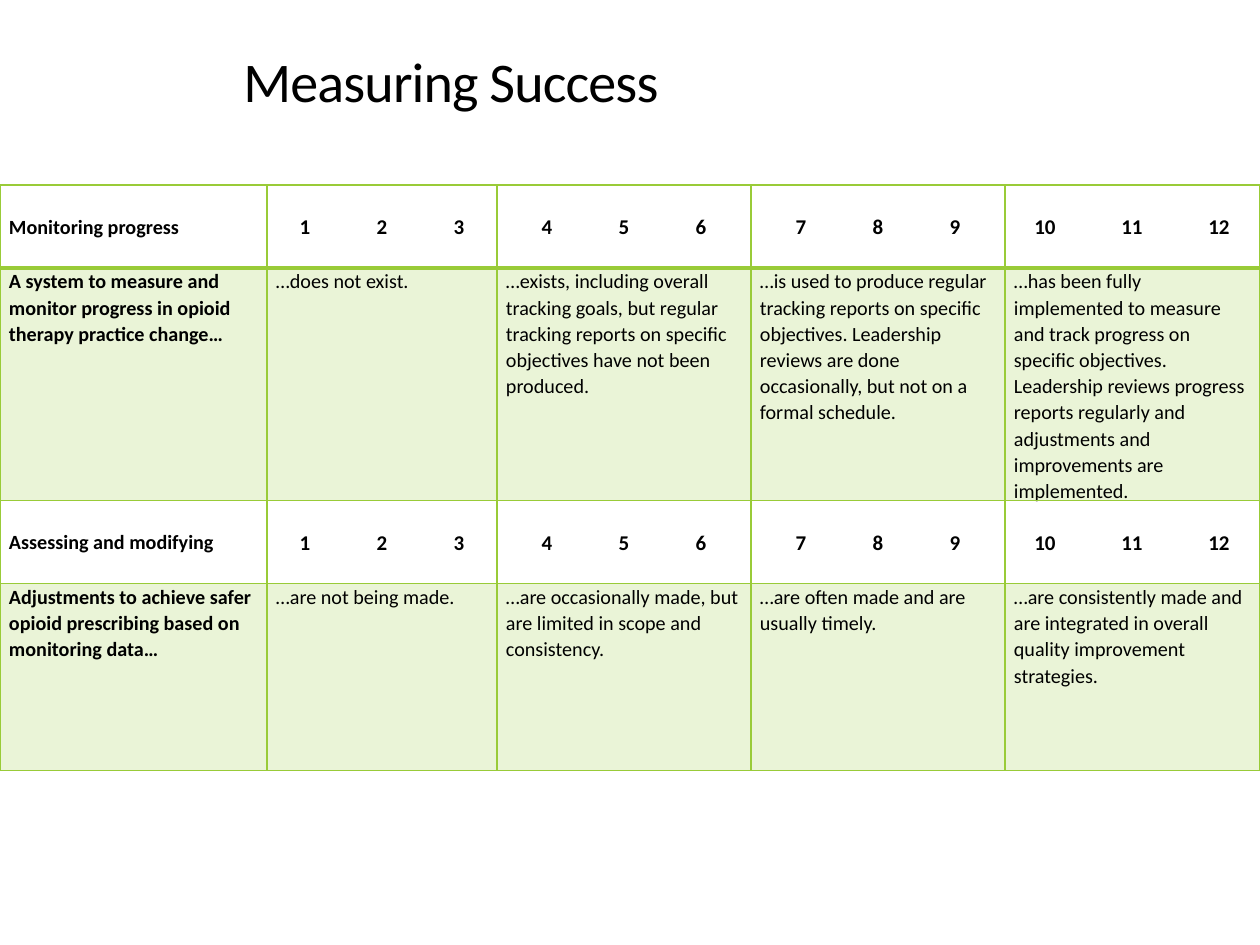
"""Build the Measuring Success slide with its progress scoring table."""
from lxml.etree import SubElement
from pptx import Presentation
from pptx.dml.color import RGBColor
from pptx.enum.text import MSO_ANCHOR
from pptx.oxml import parse_xml
from pptx.oxml.ns import nsdecls, qn
from pptx.util import Pt

PX = 914400 // 126
GREEN = "99CB38"
INSET = 9
COLUMN_WIDTHS = [267, 230, 254, 254, 255]
ROW_HEIGHTS = [83, 209, 83, 187]
SCORES = ["\t1\t2\t3", "\t4\t5\t6", "\t7\t8\t9", "\t10\t11\t12"]
SCORE_STEPS = [77, 77, 77, 87]
ROWS = [
    ["Monitoring progress", *SCORES],
    [
        "A system to measure and monitor progress in opioid therapy practice change…",
        "…does not exist.",
        "…exists, including overall tracking goals, but regular tracking reports on "
        "specific objectives have not been produced.",
        "…is used to produce regular tracking reports on specific objectives. Leadership "
        "reviews are done occasionally, but not on a formal schedule.",
        "…has been fully implemented to measure and track progress on specific objectives. "
        "Leadership reviews progress reports regularly and adjustments and improvements "
        "are implemented.",
    ],
    ["Assessing and modifying", *SCORES],
    [
        "Adjustments to achieve safer opioid prescribing based on monitoring data…",
        "…are not being made.",
        "…are occasionally made, but are limited in scope and consistency.",
        "…are often made and are usually timely.",
        "…are consistently made and are integrated in overall quality improvement strategies.",
    ],
]


def style_text(para, size, bold, spacing):
    para.line_spacing = spacing
    for span in para.runs:
        span.font.name = "Calibri"
        span.font.size = Pt(size)
        span.font.bold = bold
        span.font.color.rgb = RGBColor.from_string("000000")


def add_borders(cell, widths):
    properties = cell._tc.get_or_add_tcPr()
    for index, (side, width) in enumerate(widths.items()):
        line = parse_xml(
            f'<a:ln{side} {nsdecls("a")} w="{Pt(width)}"><a:solidFill>'
            f'<a:srgbClr val="{GREEN}"/></a:solidFill></a:ln{side}>'
        )
        properties.insert(index, line)


deck = Presentation()
deck.slide_width = 1260 * PX
deck.slide_height = 945 * PX
page = deck.slides.add_slide(deck.slide_layouts[6])

title = page.shapes.add_textbox(231 * PX, 58 * PX, 999 * PX, 62 * PX)
title.text_frame.word_wrap = True
title.text_frame.vertical_anchor = MSO_ANCHOR.BOTTOM
title.text_frame.text = "Measuring Success"
title_para = title.text_frame.paragraphs[0]
style_text(title_para, 32, False, 0.85)
title_para.runs[0].font._element.set("spc", "-50")

table = page.shapes.add_table(
    len(ROWS), len(COLUMN_WIDTHS), 0, 185 * PX,
    sum(COLUMN_WIDTHS) * PX, sum(ROW_HEIGHTS) * PX,
).table
table.first_row = False
table.horz_banding = False
for column, width in zip(table.columns, COLUMN_WIDTHS):
    column.width = width * PX

for row_index, texts in enumerate(ROWS):
    table.rows[row_index].height = ROW_HEIGHTS[row_index] * PX
    is_scale = row_index % 2 == 0
    for column_index, text in enumerate(texts):
        cell = table.cell(row_index, column_index)
        cell.margin_left = cell.margin_right = INSET * PX
        cell.margin_top = cell.margin_bottom = 0
        cell.text_frame.text = text
        para = cell.text_frame.paragraphs[0]
        is_label = column_index == 0

        if is_scale:
            cell.vertical_anchor = MSO_ANCHOR.MIDDLE
            cell.fill.background()
        else:
            cell.fill.solid()
            cell.fill.fore_color.rgb = RGBColor.from_string(GREEN)
            color = cell._tc.tcPr.find(f".//{qn('a:srgbClr')}")
            SubElement(color, qn("a:alpha"), val="20000")

        if is_scale and not is_label:
            middle = COLUMN_WIDTHS[column_index] // 2 - INSET
            step = SCORE_STEPS[column_index - 1]
            tabs = SubElement(para._p.get_or_add_pPr(), qn("a:tabLst"))
            for position in (middle - step, middle, middle + step):
                SubElement(tabs, qn("a:tab"), pos=str(position * PX), algn="ctr")

        style_text(para, 12 if is_scale and not is_label else 11.5, is_scale or is_label, 1.07)
        top = 2 if row_index == 1 else 1
        bottom = 2 if row_index == 0 else 1
        add_borders(cell, {"L": 1, "R": 1, "T": top, "B": bottom})

deck.save("out.pptx")
